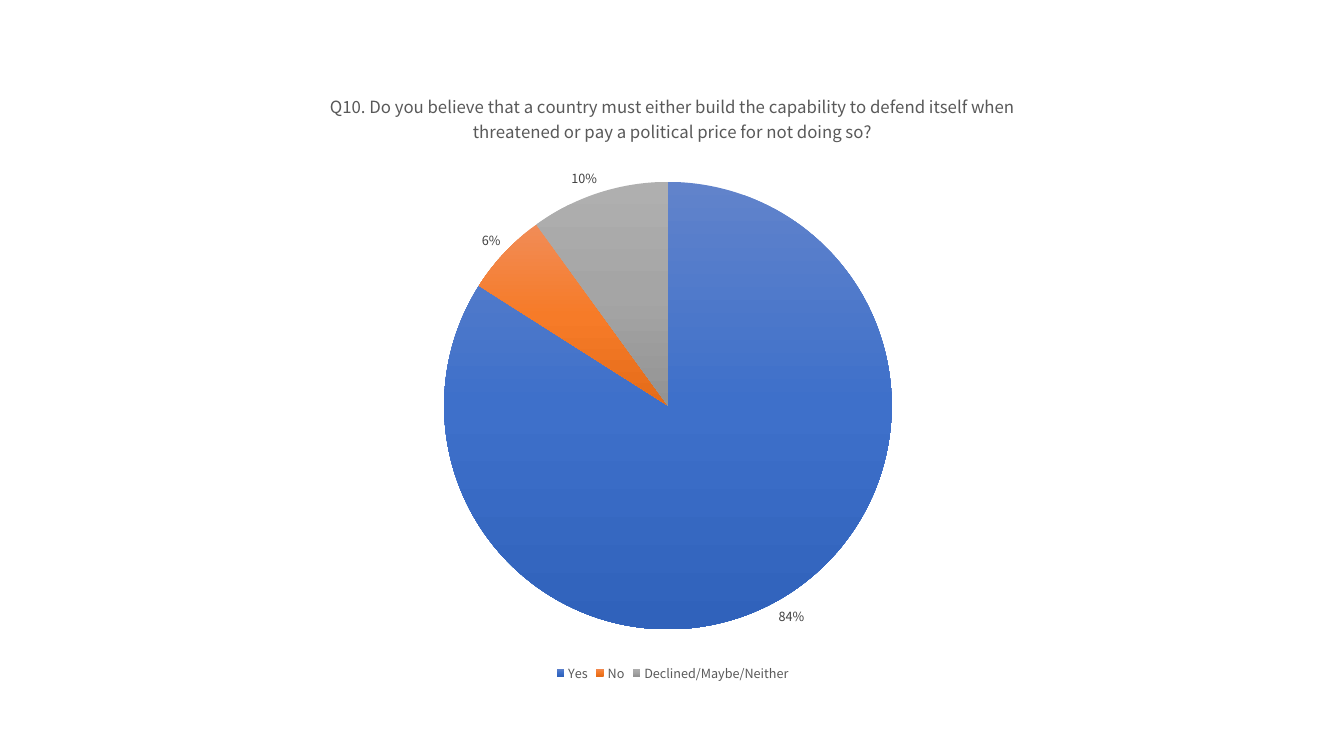
from copy import deepcopy

from lxml.etree import SubElement
from pptx import Presentation
from pptx.chart.data import CategoryChartData
from pptx.dml.color import RGBColor
from pptx.enum.chart import XL_CHART_TYPE, XL_LABEL_POSITION, XL_LEGEND_POSITION
from pptx.oxml.ns import qn
from pptx.util import Inches, Pt

FONT = "Noto Sans CJK KR"
COLOURS = {"text": "595959", "label": "404040", "base": "000000"}
QUESTION = (
    "Q10. Do you believe that a country must either build the capability to defend "
    "itself when threatened or pay a political price for not doing so?"
)
ANSWERS = {
    "Yes": (0.84, ("6183CB", "3E70CA", "3062BB")),
    "No": (0.06, ("F18C57", "F67B28", "E56C19")),
    "Declined/Maybe/Neither": (0.10, ("AFAFAF", "A5A5A5", "939393")),
}
CHART_AREA = (2.14, 0.7, 9.06, 6.1)
PIE_AREA = {"x": 0.25, "y": 0.18, "w": 0.49, "h": 0.73}


class SurveyPage:
    def __init__(self, deck):
        self.page = deck.slides.add_slide(deck.slide_layouts[6])

    def style(self, font, size, colour):
        font.name = FONT
        font.size = Pt(size)
        font.bold = False
        font.color.rgb = RGBColor.from_string(COLOURS[colour])

    def add_pie(self, question, answers):
        data = CategoryChartData(number_format="0%")
        data.categories = answers.keys()
        data.add_series(question, [share for share, _ in answers.values()])
        area = [Inches(length) for length in CHART_AREA]
        chart = self.page.shapes.add_chart(XL_CHART_TYPE.PIE, *area, data).chart
        self.style(chart.font, 10, "base")
        self.add_title(chart, question)
        self.add_legend(chart)
        self.add_labels(chart.plots[0])
        self.place_pie(chart)
        points = chart.plots[0].series[0].points
        for index, (_, shades) in enumerate(answers.values()):
            self.shade(points[index].format.fill, shades)

    def add_title(self, chart, question):
        number, wording = question.split(" ", 1)
        frame = chart.chart_title.text_frame
        frame.text = f"{number} {wording}"
        self.style(frame.paragraphs[0].runs[0].font, 12, "text")
        chart.chart_title.include_in_layout = False

    def add_legend(self, chart):
        chart.has_legend = True
        chart.legend.position = XL_LEGEND_POSITION.BOTTOM
        chart.legend.include_in_layout = False
        self.style(chart.legend.font, 9, "text")

    def add_labels(self, plot):
        plot.vary_by_categories = True
        labels = plot.series[0].data_labels
        labels.show_value = True
        labels.number_format = "0%"
        labels.number_format_is_linked = False
        labels.position = XL_LABEL_POSITION.OUTSIDE_END
        self.style(labels.font, 9, "label")

    def place_pie(self, chart):
        """Fix the pie's square as fractions of the chart area."""
        plot_area = chart.element.find(".//" + qn("c:plotArea"))
        for layout in plot_area.findall(qn("c:layout")):
            plot_area.remove(layout)
        layout = SubElement(plot_area, qn("c:layout"))
        plot_area.insert(0, layout)
        manual = SubElement(layout, qn("c:manualLayout"))
        settings = {"layoutTarget": "inner", "xMode": "edge", "yMode": "edge", **PIE_AREA}
        for name, value in settings.items():
            SubElement(manual, qn(f"c:{name}")).set("val", str(value))

    def shade(self, fill, shades):
        """Run a gradient from top to bottom with evenly spaced stops."""
        fill.gradient()
        fill.gradient_angle = 270
        stops = fill.gradient_stops
        first = stops[0]._gs
        first.addnext(deepcopy(first))
        for index, (stop, shade) in enumerate(zip(stops, shades)):
            stop.position = index / (len(shades) - 1)
            stop.color.rgb = RGBColor.from_string(shade)


def main():
    deck = Presentation()
    deck.slide_width = Inches(13.33)
    deck.slide_height = Inches(7.5)
    SurveyPage(deck).add_pie(QUESTION, ANSWERS)
    deck.save("out.pptx")


if __name__ == "__main__":
    main()
